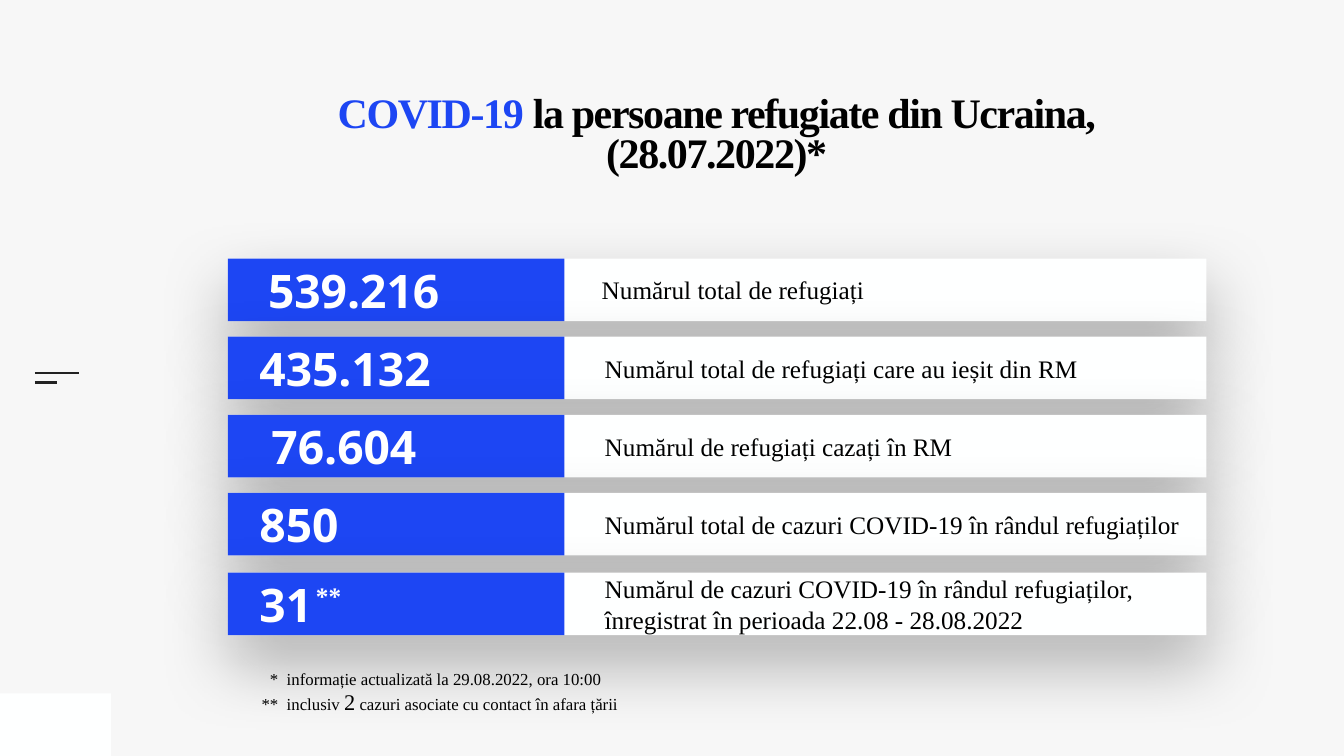
from lxml import etree
from pptx import Presentation
from pptx.dml.color import RGBColor
from pptx.enum import shapes, text
from pptx.oxml import ns
from pptx.util import Pt

BLUE = RGBColor(0x1D, 0x46, 0xF3)
WHITE = RGBColor(0xFF, 0xFF, 0xFF)
PANEL = RGBColor(0xFE, 0xFF, 0xFF)
BLACK = RGBColor(0, 0, 0)
DARK = RGBColor(0x22, 0x22, 0x22)
PAPER = RGBColor(0xF7, 0xF7, 0xF7)
SERIF, SANS = "Times New Roman", "Open Sans"

# (top, number, number left, label, label left)
ROWS = [
    (369.4, "539.216", 375.8, "Numărul total de refugiați", 852.5),
    (481, "435.132", 363.6, "Numărul total de refugiați care au ieșit din RM", 856.8),
    (592.6, " 76.604", 363.6, "Numărul de refugiați cazați în RM", 856.8),
    (704.2, "850", 363.6, "Numărul total de cazuri COVID-19 în rândul refugiaților", 856.8),
    (818, "31", 363.6, "Numărul de cazuri COVID-19 în rândul refugiaților, "
     "înregistrat în perioada 22.08 - 28.08.2022", 856.8),
]
HIGH = 89.3


def add_run(para, words, size, color, font=SERIF, bold=False):
    """Append one formatted run to a paragraph."""
    run = para.add_run()
    run.text = words
    run.font.size, run.font.name, run.font.bold = Pt(size), font, bold
    run.font.color.rgb = color
    return run


def add_rect(slide, x, y, w, h, color):
    """Add a plain filled rectangle."""
    rect = slide.shapes.add_shape(shapes.MSO_SHAPE.RECTANGLE, Pt(x), Pt(y), Pt(w), Pt(h))
    rect.shadow.inherit = False
    rect.fill.solid()
    rect.fill.fore_color.rgb = color
    rect.line.fill.background()
    return rect


def add_glow(rect):
    """Give a rectangle a soft shadow below it."""
    fx = rect._element.spPr.find(ns.qn("a:effectLst"))
    shade = etree.SubElement(fx, ns.qn("a:outerShdw"), blurRad=str(Pt(100)),
                             dist=str(Pt(40)), dir="5400000", rotWithShape="0")
    tint = etree.SubElement(shade, ns.qn("a:srgbClr"), val="000000")
    etree.SubElement(tint, ns.qn("a:alpha"), val="30000")


def add_line(slide, x, y, end):
    """Add a thin horizontal line."""
    line = slide.shapes.add_connector(shapes.MSO_CONNECTOR.STRAIGHT, Pt(x), Pt(y), Pt(end), Pt(y))
    line.line.color.rgb, line.line.width = DARK, Pt(3)
    etree.SubElement(line._element.spPr, ns.qn("a:effectLst"))


def add_box(slide, x, y, w, h, anchor=text.MSO_ANCHOR.MIDDLE):
    """Add a wrapping text box and return its frame."""
    frame = slide.shapes.add_textbox(Pt(x), Pt(y), Pt(w), Pt(h)).text_frame
    frame.word_wrap = True
    frame.vertical_anchor = anchor
    frame.margin_left = frame.margin_right = Pt(7.2)
    frame.margin_top = frame.margin_bottom = Pt(7.2)
    return frame


def add_title(slide):
    """Place and fill the title."""
    title = slide.shapes.title
    title.left, title.top, title.width, title.height = Pt(324), Pt(136.8), Pt(1399.7), Pt(144.7)
    frame = title.text_frame
    frame.word_wrap = True
    frame.auto_size = text.MSO_AUTO_SIZE.NONE
    frame.vertical_anchor = text.MSO_ANCHOR.TOP
    frame.margin_left = frame.margin_right = frame.margin_top = frame.margin_bottom = 0
    para = frame.paragraphs[0]
    para.alignment, para.line_spacing = text.PP_ALIGN.CENTER, 0.8
    runs = [add_run(para, "COVID-19 ", 60, BLUE, bold=True),
            add_run(para, "la persoane refugiate din Ucraina,", 60, BLACK, bold=True)]
    para.add_line_break()
    runs.append(add_run(para, "(28.07.2022)*", 60, BLACK, bold=True))
    for run in runs:
        run._r.get_or_add_rPr().set("spc", "-200")


def add_row(slide, top, num, left, label, start):
    """Add one figure with its label."""
    add_glow(add_rect(slide, 325.4, top, 1398.2, HIGH, PANEL))
    frame = add_box(slide, start, top, 849, HIGH)
    add_run(frame.paragraphs[0], label, 36, BLACK)
    add_rect(slide, 325.4, top, 481, HIGH, BLUE)
    frame = add_box(slide, left, top - 2.9, 431, 94.3)
    add_run(frame.paragraphs[0], num, 66, WHITE, SANS, True)


def add_notes(slide):
    """Add the two footnotes with hanging marks."""
    frame = add_box(slide, 366.5, 947.5, 555.8, 82)
    notes = [(-24, [("*\tinformație actualizată la 29.08.2022, ora 10:00", 24)]),
             (-36, [("**\tinclusiv ", 24), ("2", 32),
                    (" cazuri asociate cu contact în afara țării", 24)])]
    for i, (hang, parts) in enumerate(notes):
        para = frame.add_paragraph() if i else frame.paragraphs[0]
        props = para._p.get_or_add_pPr()
        props.set("marL", str(Pt(36)))
        props.set("indent", str(Pt(hang)))
        for words, size in parts:
            add_run(para, words, size, BLACK)


def main():
    """Build and save the slide."""
    deck = Presentation()
    deck.slide_width, deck.slide_height = Pt(1920), Pt(1080)
    slide = deck.slides.add_slide(deck.slide_layouts[5])
    slide.background.fill.solid()
    slide.background.fill.fore_color.rgb = PAPER
    add_rect(slide, 0, 990.7, 158.4, 89.3, PANEL)
    add_line(slide, 49.7, 533.5, 113)
    add_line(slide, 49.7, 546.5, 81.4)
    add_title(slide)
    for row in ROWS:
        add_row(slide, *row)
    add_notes(slide)
    frame = add_box(slide, 444.2, 825.1, 50.4, 51.1, text.MSO_ANCHOR.TOP)
    frame.margin_top = frame.margin_bottom = Pt(3.6)
    para = frame.paragraphs[0]
    para.alignment = text.PP_ALIGN.CENTER
    add_run(para, "**", 36, WHITE, bold=True)
    deck.save("out.pptx")


if __name__ == "__main__":
    main()
